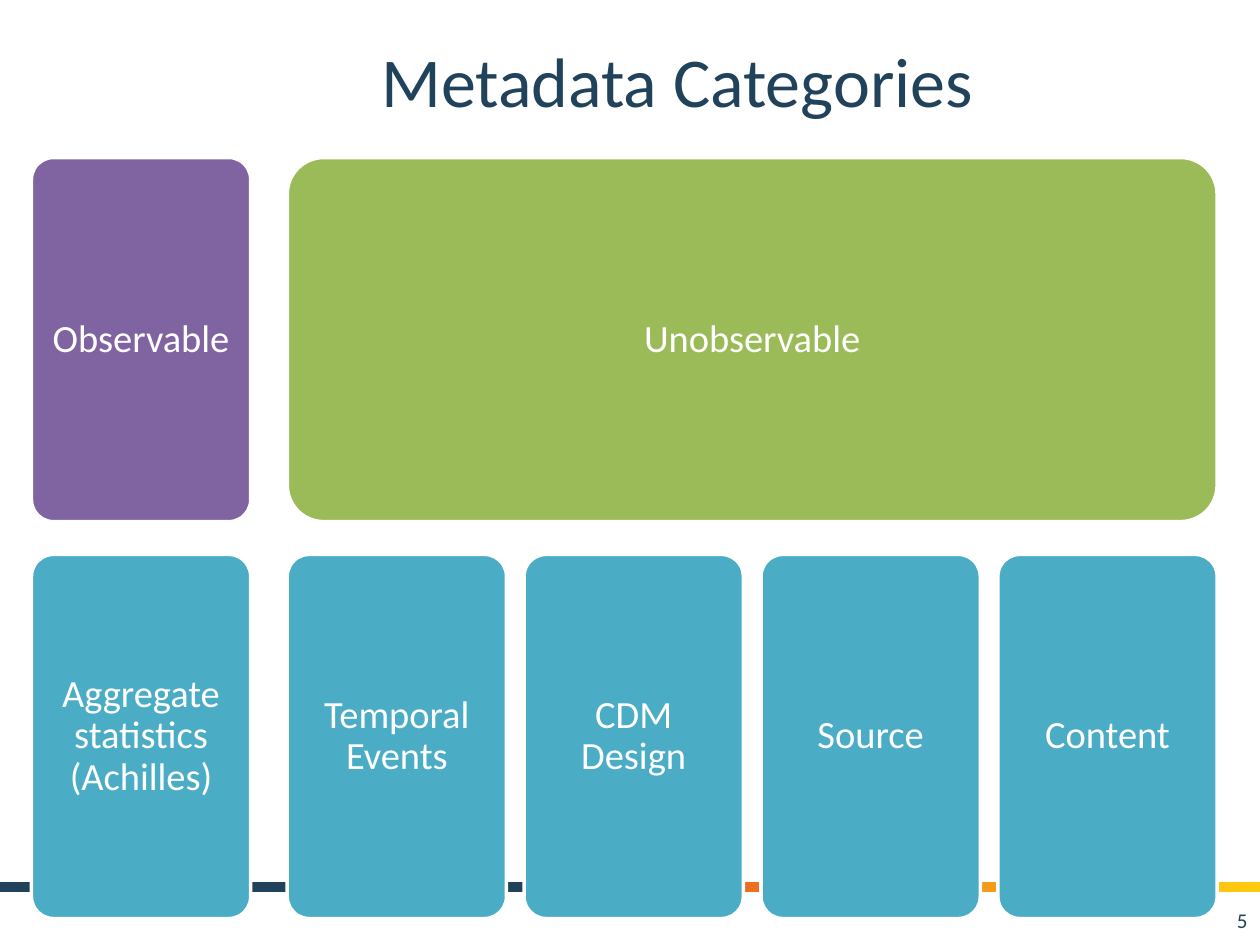
from copy import deepcopy

from pptx import Presentation
from pptx import util as u
from pptx.dml.color import RGBColor
from pptx.enum import shapes, text
from pptx.oxml.ns import qn

COLORS = {"navy": "20425A", "orange": "EB6622", "yellow": "FCCB10", "white": "FFFFFF",
          "purple": "8064A2", "green": "9BBB59", "teal": "4BACC6"}
FONT = "Calibri"

# Card grid, in inches
LEFT, TOP = 0.25, 1.25
CARD_W, CARD_H = 1.74, 2.89
COL_GAP, GROUP_GAP, ROW_GAP = 0.14, 0.29, 0.26

GROUPS = [
    ("Observable", "purple", ["Aggregate statistics (Achilles)"]),
    ("Unobservable", "green", ["Temporal Events", "CDM Design", "Source", "Content"]),
]


def rgb(name):
    return RGBColor.from_string(COLORS[name])


def place(sp, box):
    sp.left, sp.top, sp.width, sp.height = (u.Inches(v) for v in box)


def write(tf, content, size, color, align):
    tf.text = content
    tf.word_wrap = True
    tf.vertical_anchor = text.MSO_ANCHOR.MIDDLE
    p = tf.paragraphs[0]
    p.alignment = align
    f = p.runs[0].font
    f.name, f.size, f.color.rgb = FONT, u.Pt(size), rgb(color)
    return p


def add_footer_bar(s, box):
    sp = s.shapes.add_shape(shapes.MSO_SHAPE.RECTANGLE, *(u.Inches(v) for v in box))
    sp.shadow.inherit = False
    sp.line.fill.background()
    sp.fill.gradient()
    sp.fill.gradient_angle = 0
    stops = sp.element.find(".//" + qn("a:gsLst"))
    stops.insert(1, deepcopy(stops[0]))
    for stop, position, name in zip(sp.fill.gradient_stops, (0.44, 0.55, 1),
                                    ("navy", "orange", "yellow")):
        stop.position = position
        stop.color.rgb = rgb(name)


def add_title(s, box):
    place(s.shapes.title, box)
    write(s.shapes.title.text_frame, "Metadata Categories", 40, "navy", text.PP_ALIGN.CENTER)


def add_page_number(s, box):
    sp = s.shapes.add_textbox(*(u.Inches(v) for v in box))
    write(sp.text_frame, "5", 12, "navy", text.PP_ALIGN.RIGHT)


def add_card(s, box, label, color):
    sp = s.shapes.add_shape(shapes.MSO_SHAPE.ROUNDED_RECTANGLE, *(u.Inches(v) for v in box))
    sp.adjustments[0] = 0.1
    sp.shadow.inherit = False
    sp.fill.solid()
    sp.fill.fore_color.rgb = rgb(color)
    sp.line.color.rgb = rgb("white")
    sp.line.width = u.Pt(2)
    tf = sp.text_frame
    tf.margin_left = tf.margin_right = tf.margin_top = tf.margin_bottom = u.Inches(0.09)
    p = write(tf, label, 22, "white", text.PP_ALIGN.CENTER)
    p.line_spacing = 0.9


def add_group(s, x, y, heading, color, members):
    """Draw a heading card spanning its member cards; return the group's width."""
    pitch = CARD_W + COL_GAP
    width = len(members) * pitch - COL_GAP
    add_card(s, (x, y, width, CARD_H), heading, color)
    for i, label in enumerate(members):
        add_card(s, (x + i * pitch, y + CARD_H + ROW_GAP, CARD_W, CARD_H), label, "teal")
    return width


def main():
    prs = Presentation()
    prs.slide_width, prs.slide_height = u.Inches(10), u.Inches(7.5)
    s = prs.slides.add_slide(prs.slide_layouts[5])
    add_footer_bar(s, (0, 7, 10, 0.08))
    add_title(s, (1.25, 0.17, 8.25, 0.92))
    add_page_number(s, (7.67, 7.1, 2.33, 0.4))
    x = LEFT
    for heading, color, members in GROUPS:
        x += add_group(s, x, TOP, heading, color, members) + GROUP_GAP
    prs.save("out.pptx")


if __name__ == "__main__":
    main()
